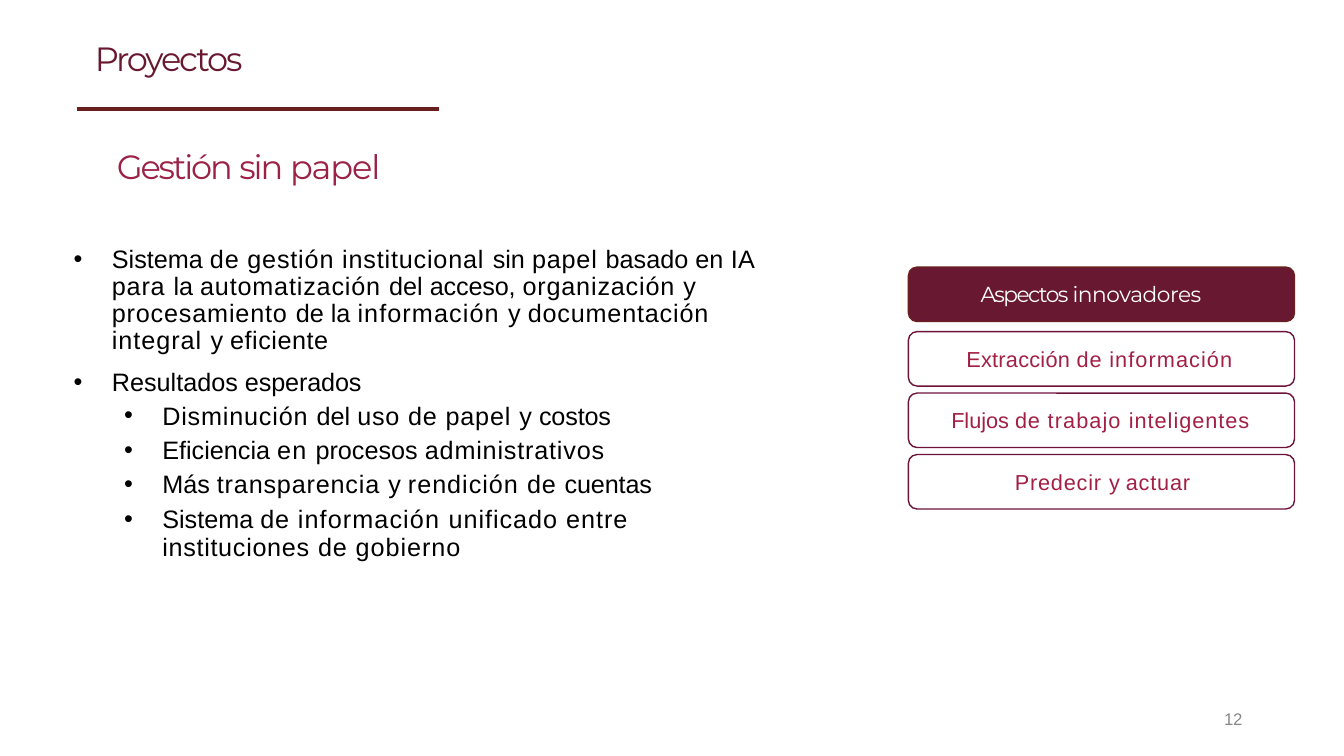
from lxml import etree
from pptx import Presentation
from pptx.dml.color import RGBColor
from pptx.enum.shapes import MSO_CONNECTOR, MSO_SHAPE
from pptx.enum.text import MSO_ANCHOR, MSO_AUTO_SIZE, PP_ALIGN
from pptx.oxml.ns import qn
from pptx.util import Emu, Pt

PX = 9144
ROUNDED = MSO_SHAPE.ROUNDED_RECTANGLE
STRAIGHT = MSO_CONNECTOR.STRAIGHT
TOP, MIDDLE = MSO_ANCHOR.TOP, MSO_ANCHOR.MIDDLE
LEFT = PP_ALIGN.LEFT
NO_FIT = MSO_AUTO_SIZE.NONE

SYSTEM = [
    ("Sistema ", 0), ("de gestión institucional ", 0.6), ("sin ", 0),
    ("papel ", 0.6), ("basado en", 0), (" IA ", 0.3), ("para ", 0.6),
    ("la ", 0), ("automatización ", 0.6), ("del ", 0), ("acceso, ", -0.1),
    ("organización ", 0.6), ("y ", -0.5), ("procesamiento ", 0.6),
    ("de la ", 0), ("información ", 0.8), ("y ", 0),
    ("documentación ", 0.6), ("integral ", 0.7), ("y ", 0),
    ("eficiente", 0.4),
]
RESULTS = [("Resultados ", 0), ("esperados", -0.1)]
COSTS = [("Disminución ", 0.6), ("del ", 0), ("uso de papel ", 0.6),
         ("y ", 0), ("costos", -0.1)]
EFFICIENCY = [("Eficiencia ", 0), ("en ", 0.8), ("procesos ", 0),
              ("administrativos", 0.6)]
TRANSPARENCY = [("Más ", 0), ("transparencia ", 0.6), ("y ", 0),
                ("rendición ", 0.7), ("de ", 0.6), ("cuentas", -0.1)]
UNIFIED = [("Sistema ", 0), ("de ", 0.6), ("información ", 0.8),
           ("unificado entre ", 0.7), ("instituciones ", 0.5),
           ("de ", 0.6), ("gobierno", 0.7)]

BULLETS = [
    (SYSTEM, 0, 0, 0.89),
    (RESULTS, 0, 8.4, None),
    (COSTS, 1, 2.5, None),
    (EFFICIENCY, 1, 3.1, None),
    (TRANSPARENCY, 1, 2.5, None),
    (UNIFIED, 1, 5.6, Pt(19.5)),
]

HEADING = [("Aspectos ", -1.1), ("innovadores", -0.3)]
FEATURES = [
    (55, [("Extracción ", 0.2), ("de ", 0.6), ("información", 0.8)]),
    (40, [("Flujos ", 0), ("de ", 0.6), ("trabajo ", 0.8),
          ("inteligentes", 0.7)]),
    (103, [("Predecir ", 0.6), ("y ", 0), ("actuar", 0.6)]),
]


def px(length):
    return Emu(length * PX)


def color(value):
    return RGBColor.from_string(value)


def fill_para(para, spans, font, size, ink):
    para.alignment = LEFT
    for text, spacing in spans:
        span = para.add_run()
        span.text = text
        span.font.name = font
        span.font.size = Pt(size)
        span.font.color.rgb = color(ink)
        span.font._element.set("spc", str(round(spacing * 100)))


def set_frame(frame, left, top, anchor=TOP):
    frame.word_wrap = True
    frame.auto_size = NO_FIT
    frame.vertical_anchor = anchor
    frame.margin_left, frame.margin_top = px(left), px(top)
    frame.margin_right = frame.margin_bottom = 0


def add_title(page, spans):
    title = page.shapes.title
    title.left, title.top, title.width, title.height = map(px, (93, 36, 453, 43))
    set_frame(title.text_frame, 1, 2)
    fill_para(title.text_frame.paragraphs[0], spans, "Montserrat", 24, "691831")


def add_text(page, place, inset, spans, font, size, ink):
    box = page.shapes.add_textbox(*map(px, place))
    set_frame(box.text_frame, *inset)
    fill_para(box.text_frame.paragraphs[0], spans, font, size, ink)


def add_rule(page, left, top, right):
    rule = page.shapes.add_connector(STRAIGHT, px(left), px(top), px(right), px(top))
    rule.line.color.rgb = color("691F1D")
    rule.line.width = Pt(3)
    etree.SubElement(rule._element.spPr, qn("a:effectLst"))


def add_bullet(para, level):
    para.level = level
    properties = para._p.get_or_add_pPr()
    properties.set("marL", str(px(39 + 50 * level)))
    properties.set("indent", str(px(-38)))
    etree.SubElement(properties, qn("a:buFont")).set("typeface", "Arial")
    etree.SubElement(properties, qn("a:buChar")).set("char", "•")


def add_bullet_list(page):
    box = page.shapes.add_textbox(*map(px, (72, 235, 684, 318)))
    frame = box.text_frame
    set_frame(frame, 0, 10)
    for index, (spans, level, before, spacing) in enumerate(BULLETS):
        para = frame.add_paragraph() if index else frame.paragraphs[0]
        add_bullet(para, level)
        if before:
            para.space_before = Pt(before)
        if spacing:
            para.line_spacing = spacing
        fill_para(para, spans, "Arial", 18, "000000")


def add_button(page, top, indent, spans, font, ink, fill, border):
    button = page.shapes.add_shape(ROUNDED, px(901), px(top), px(383), px(54))
    button.adjustments[0] = 0.16
    button.shadow.inherit = False
    button.fill.solid()
    button.fill.fore_color.rgb = color(fill)
    button.line.color.rgb = color(border)
    button.line.width = Pt(1)
    set_frame(button.text_frame, indent, 0, MIDDLE)
    fill_para(button.text_frame.paragraphs[0], spans, font, 15.5, ink)


def main():
    deck = Presentation()
    deck.slide_width, deck.slide_height = px(1333), px(750)
    page = deck.slides.add_slide(deck.slide_layouts[5])
    add_title(page, [("Proyectos", -1.5)])
    add_rule(page, 76, 108, 435)
    add_text(page, (115, 142, 289, 43), (1, 3),
             [("Gestión ", -1.6), ("sin ", -1.5), ("papel", -0.8)],
             "Montserrat", 24, "9B2146")
    add_bullet_list(page)
    add_button(page, 265, 69, HEADING, "Montserrat", "FFFFFF", "691831", "691F1D")
    for index, (indent, spans) in enumerate(FEATURES):
        add_button(page, 329 + 61 * index, indent, spans,
                   "Arial", "A32045", "FFFFFF", "6C133A")
    add_text(page, (1210, 698, 28, 25), (4, 5), [("12", -0.2)],
             "Arial", 12, "878787")
    deck.save("out.pptx")


if __name__ == "__main__":
    main()
